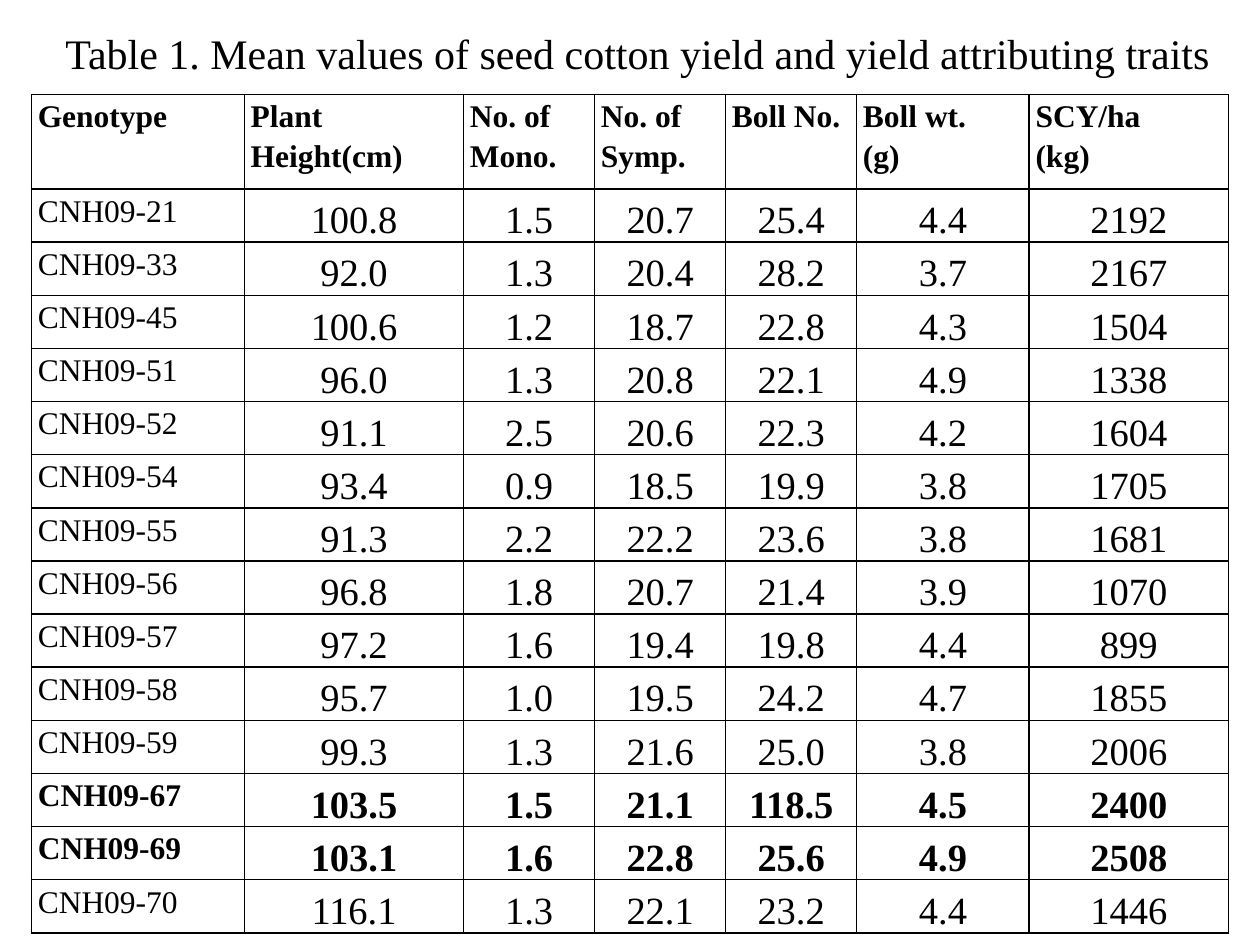
from typing import NamedTuple

from lxml import etree
from pptx import Presentation
from pptx.dml.color import RGBColor
from pptx.enum.text import MSO_ANCHOR, MSO_AUTO_SIZE, PP_ALIGN
from pptx.oxml.ns import qn
from pptx.util import Inches, Pt

LEFT, CENTER = PP_ALIGN.LEFT, PP_ALIGN.CENTER
TOP, BOTTOM = MSO_ANCHOR.TOP, MSO_ANCHOR.BOTTOM
FIT_SHAPE = MSO_AUTO_SIZE.SHAPE_TO_FIT_TEXT
FONT = "Times New Roman"
BLACK = "000000"
TITLE = "Table 1. Mean values of seed cotton yield and yield attributing traits"


class Column(NamedTuple):
    heading: str
    width: float


class Genotype(NamedTuple):
    name: str
    traits: str
    bold: bool = False


class CellStyle(NamedTuple):
    size: float
    bold: bool
    align: PP_ALIGN = LEFT
    anchor: MSO_ANCHOR = TOP


COLUMNS = [
    Column("Genotype", 1.69),
    Column("Plant\nHeight(cm)", 1.74),
    Column("No. of Mono.", 1.04),
    Column("No. of Symp.", 1.04),
    Column("Boll No.", 1.04),
    Column("Boll wt.\n(g)", 1.37),
    Column("SCY/ha\n(kg)", 1.58),
]
GENOTYPES = [
    Genotype("CNH09-21", "100.8 1.5 20.7 25.4 4.4 2192"),
    Genotype("CNH09-33", "92.0 1.3 20.4 28.2 3.7 2167"),
    Genotype("CNH09-45", "100.6 1.2 18.7 22.8 4.3 1504"),
    Genotype("CNH09-51", "96.0 1.3 20.8 22.1 4.9 1338"),
    Genotype("CNH09-52", "91.1 2.5 20.6 22.3 4.2 1604"),
    Genotype("CNH09-54", "93.4 0.9 18.5 19.9 3.8 1705"),
    Genotype("CNH09-55", "91.3 2.2 22.2 23.6 3.8 1681"),
    Genotype("CNH09-56", "96.8 1.8 20.7 21.4 3.9 1070"),
    Genotype("CNH09-57", "97.2 1.6 19.4 19.8 4.4 899"),
    Genotype("CNH09-58", "95.7 1.0 19.5 24.2 4.7 1855"),
    Genotype("CNH09-59", "99.3 1.3 21.6 25.0 3.8 2006"),
    Genotype("CNH09-67", "103.5 1.5 21.1 118.5 4.5 2400", True),
    Genotype("CNH09-69", "103.1 1.6 22.8 25.6 4.9 2508", True),
    Genotype("CNH09-70", "116.1 1.3 22.1 23.2 4.4 1446"),
]
TABLE_HEIGHT, HEADER_HEIGHT = 6.65, 0.75


def color(value: str) -> RGBColor:
    return RGBColor.from_string(value)


def add_run(p, text: str, size: float, bold: bool = False) -> None:
    r = p.add_run()
    r.text = text
    r.font.name = FONT
    r.font.size = Pt(size)
    r.font.bold = bold
    r.font.color.rgb = color(BLACK)


def add_borders(cell) -> None:
    tc_pr = cell._tc.get_or_add_tcPr()
    for side in ("a:lnL", "a:lnR", "a:lnT", "a:lnB"):
        ln = etree.SubElement(tc_pr, qn(side), w=str(Pt(1)))
        fill = etree.SubElement(ln, qn("a:solidFill"))
        etree.SubElement(fill, qn("a:srgbClr"), val=BLACK)


def fill_cell(cell, text: str, style: CellStyle) -> None:
    add_borders(cell)
    cell.fill.background()
    cell.margin_left = cell.margin_right = Inches(0.05)
    cell.margin_top = cell.margin_bottom = Inches(0)
    cell.vertical_anchor = style.anchor
    tf = cell.text_frame
    for i, line in enumerate(text.split("\n")):
        p = tf.add_paragraph() if i else tf.paragraphs[0]
        p.alignment = style.align
        p.line_spacing = 1.15
        add_run(p, line, style.size, style.bold)


def add_title(slide) -> None:
    box = slide.shapes.add_textbox(Inches(0.42), Inches(0.17), Inches(9.42), Inches(0.5))
    tf = box.text_frame
    tf.word_wrap = True
    tf.auto_size = FIT_SHAPE
    add_run(tf.paragraphs[0], TITLE, 24)


def add_trait_table(slide) -> None:
    table = slide.shapes.add_table(
        len(GENOTYPES) + 1, len(COLUMNS),
        Inches(0.25), Inches(0.75), Inches(9.5), Inches(TABLE_HEIGHT),
    ).table
    row_height = (TABLE_HEIGHT - HEADER_HEIGHT) / len(GENOTYPES)
    table.rows[0].height = Inches(HEADER_HEIGHT)
    for c, column in enumerate(COLUMNS):
        table.columns[c].width = Inches(column.width)
        fill_cell(table.cell(0, c), column.heading, CellStyle(18, True))
    for r, genotype in enumerate(GENOTYPES, 1):
        table.rows[r].height = Inches(row_height)
        fill_cell(table.cell(r, 0), genotype.name, CellStyle(18, genotype.bold))
        trait_style = CellStyle(22, genotype.bold, CENTER, BOTTOM)
        for c, value in enumerate(genotype.traits.split(), 1):
            fill_cell(table.cell(r, c), value, trait_style)


def main() -> None:
    prs = Presentation()
    prs.slide_width, prs.slide_height = Inches(10), Inches(7.5)
    slide = prs.slides.add_slide(prs.slide_layouts[6])
    add_title(slide)
    add_trait_table(slide)
    prs.save("out.pptx")


if __name__ == "__main__":
    main()
